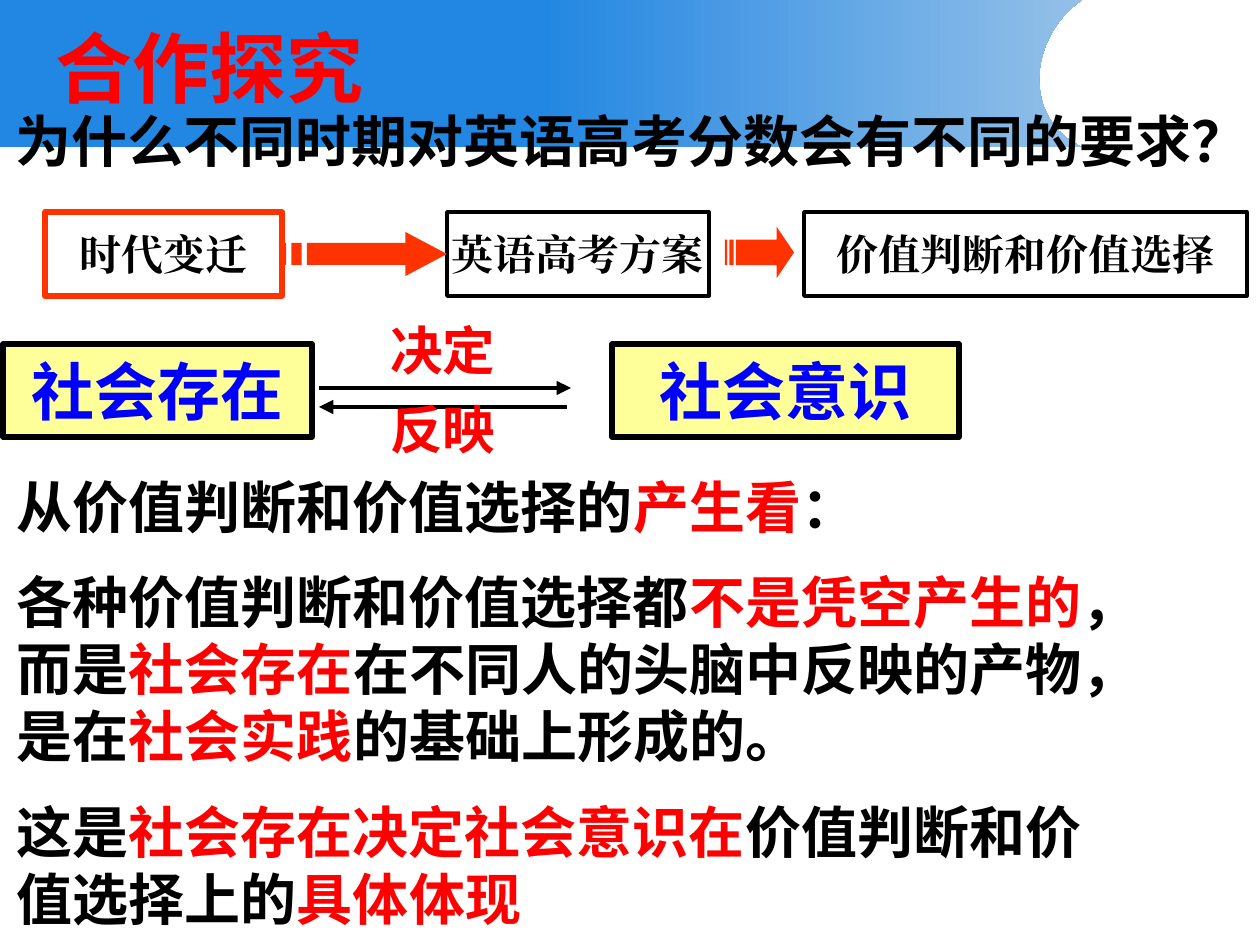
from lxml.etree import SubElement
from pptx import Presentation
from pptx.dml.color import RGBColor
from pptx.enum.shapes import MSO_CONNECTOR, MSO_SHAPE
from pptx.enum.text import MSO_ANCHOR, MSO_AUTO_SIZE, PP_ALIGN
from pptx.oxml.ns import qn
from pptx.util import Emu, Pt

SCALE = 914400 / 126
BLACK, RED, BLUE = "000000", "FF0000", "0000FF"
SANS, SERIF, NOTO = "Arial", "Times New Roman", "Noto Sans CJK SC"


def px(n):
    return Emu(round(n * SCALE))


def tint(fmt, hue):
    fmt.rgb = RGBColor.from_string(hue)


def place(shape, box):
    shape.left, shape.top, shape.width, shape.height = map(px, box)


def add_run(par, text, size, hue=BLACK, face=SANS):
    run = par.add_run()
    run.text = text
    font = run.font
    font.size, font.bold, font.name = Pt(size), True, face
    tint(font.color, hue)
    SubElement(run._r.get_or_add_rPr(), qn("a:ea")).set("typeface", face)


def set_frame(shape, wrap=True, anchor=MSO_ANCHOR.TOP):
    frame = shape.text_frame
    frame.word_wrap = wrap
    frame.auto_size = MSO_AUTO_SIZE.NONE
    frame.vertical_anchor = anchor
    return frame


def add_label(slide, box, text, size, hue):
    shape = slide.shapes.add_textbox(*map(px, box))
    par = set_frame(shape).paragraphs[0]
    add_run(par, text, size, hue)
    return par


def add_box(slide, box, text, size, hue, face, fill, edge, width):
    shape = slide.shapes.add_shape(MSO_SHAPE.RECTANGLE, *map(px, box))
    shape.shadow.inherit = False
    shape.fill.solid()
    tint(shape.fill.fore_color, fill)
    tint(shape.line.color, edge)
    shape.line.width = Pt(width)
    par = set_frame(shape, False, MSO_ANCHOR.MIDDLE).paragraphs[0]
    par.alignment = PP_ALIGN.CENTER
    add_run(par, text, size, hue, face)


def add_outline(slide, parts):
    """Draw closed outlines, given in px, as one shape without a line."""
    first, *rest = [[(px(x), px(y)) for x, y in part] for part in parts]
    form = slide.shapes.build_freeform(*first[0])
    form.add_line_segments(first[1:])
    for part in rest:
        form.move_to(*part[0])
        form.add_line_segments(part[1:])
    shape = form.convert_to_shape()
    shape.shadow.inherit = False
    shape.line.fill.background()
    shape.fill.solid()
    return shape


def add_striped(slide, left, top, wide, high):
    """Arrow with two stripes, set out in 32nds of its width."""
    unit = wide / 32
    low, mid, up = (top + high * k / 4 for k in (3, 2, 1))
    neck, tip, tail = left + 24 * unit, left + wide, left + 5 * unit
    head = [(neck, top), (neck, up), (tail, up), (tail, low), (neck, low),
            (neck, top + high), (tip, mid)]
    bars = [[(left + a * unit, up), (left + a * unit, low),
             (left + b * unit, low), (left + b * unit, up)]
            for a, b in ((2, 4), (0, 1))]
    tint(add_outline(slide, [head] + bars).fill.fore_color, "FF3300")


def add_arrow(slide, start, end, y):
    line = slide.shapes.add_connector(
        MSO_CONNECTOR.STRAIGHT, px(start), px(y), px(end), px(y))
    tint(line.line.color, BLACK)
    line.line.width = Pt(2.75)
    SubElement(line.line._get_or_add_ln(), qn("a:tailEnd")).set("type", "triangle")
    SubElement(line._element.spPr, qn("a:effectLst"))


def add_banner(slide):
    # The right edge is a cubic curve
    ends = (1082, 0), (1028, 37), (1022, 120), (1082, 147)

    def curve(t):
        share = (1 - t) ** 3, 3 * t * (1 - t) ** 2, 3 * t * t * (1 - t), t ** 3
        return tuple(sum(s * p[i] for s, p in zip(share, ends)) for i in (0, 1))

    edge = [curve(k / 32) for k in range(33)]
    shape = add_outline(slide, [[(0, 0)] + edge + [(0, 147)]])
    fill = shape.fill
    fill.gradient()
    fill.gradient_angle = 0
    stops = fill.gradient_stops
    for stop, spot, hue in zip(stops, (0.5, 1), ("2287E2", "94C0E8")):
        stop.position = spot
        tint(stop.color, hue)
    # Behind the placeholders
    slide.shapes._spTree.insert(2, shape._element)


def add_title(slide, text):
    title = slide.shapes.title
    place(title, (43, 14, 334, 105))
    par = set_frame(title, False).paragraphs[0]
    par.alignment = PP_ALIGN.LEFT
    add_run(par, text, 44, RED)


def add_body(slide, pars):
    body = slide.placeholders[1]
    place(body, (4, 466, 1134, 483))
    frame = set_frame(body)
    for i, runs in enumerate(pars):
        par = frame.add_paragraph() if i else frame.paragraphs[0]
        par.space_before = Pt(16)
        props = par._p.get_or_add_pPr()
        props.set("marL", "0")
        props.set("indent", "0")
        SubElement(props, qn("a:buNone"))
        for text, hue, face in runs:
            add_run(par, text, 32, hue, face)


def main():
    deck = Presentation()
    deck.slide_width, deck.slide_height = px(1260), px(945)
    slide = deck.slides.add_slide(deck.slide_layouts[1])

    # Heading and question
    add_banner(slide)
    add_title(slide, "合作探究")
    ask = add_label(slide, (3, 67, 1526, 113),
                    "为什么不同时期对英语高考分数会有不同的要求？", 32, BLACK)
    ask.line_spacing = 1.5

    # Chain of causes
    for left, wide, text, edge, width in (
            (45, 237, "时代变迁", "FF3300", 3),
            (447, 262, "英语高考方案", BLACK, 2),
            (804, 443, "价值判断和价值选择", BLACK, 2)):
        add_box(slide, (left, 212, wide, 84), text, 24, BLACK, SERIF,
                "FFFFFF", edge, width)
    add_striped(slide, 281, 232, 166, 44)
    add_striped(slide, 725, 227, 69, 51)

    # Being and consciousness
    for left, wide, text in (3, 309, "社会存在"), (612, 347, "社会意识"):
        add_box(slide, (left, 344, wide, 93), text, 36, BLUE, NOTO,
                "FFFF99", BLACK, 3)
    add_arrow(slide, 319, 571, 388)
    add_arrow(slide, 567, 319, 407)
    add_label(slide, (378, 312, 159, 76), "决定", 30, RED)
    add_label(slide, (378, 391, 149, 76), "反映", 30, RED)

    # Conclusion
    add_body(slide, [
        [("从价值判断和价值选择的", BLACK, SANS), ("产生看", RED, SANS),
         ("：", BLACK, SANS)],
        [("各种价值判断和价值选择都", BLACK, SANS),
         ("不是凭空产生的", RED, SANS), ("，而是", BLACK, SANS),
         ("社会存在", RED, SANS),
         ("在不同人的头脑中反映的产物，是在", BLACK, SANS),
         ("社会实践", RED, SANS), ("的基础上形成的。", BLACK, SANS)],
        [("这是", BLACK, NOTO), ("社会存在决定社会意识在", RED, SANS),
         ("价值判断和价值选择上的", BLACK, NOTO), ("具体体现", RED, NOTO)],
    ])
    deck.save("out.pptx")


if __name__ == "__main__":
    main()
